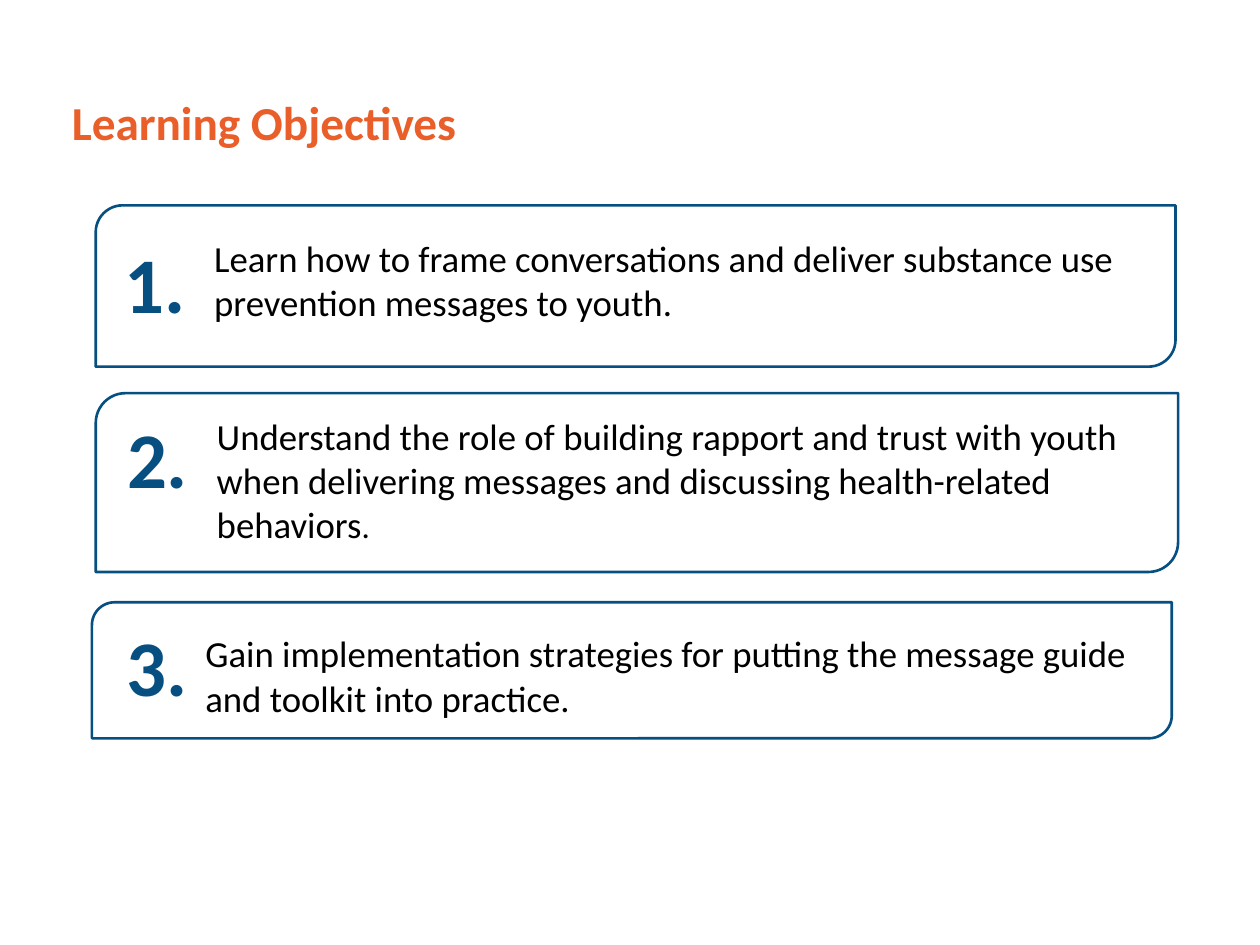
import pptx
import pptx.dml.color
import pptx.enum.shapes
import pptx.enum.text
import pptx.util

ORANGE, NAVY, BLACK, WHITE = "EA5E29", "064F80", "000000", "FFFFFF"

# Panel, number and wording frames: column, row, columns, rows
OBJECTIVES = [
    (["Learn how to frame conversations and deliver substance use "
      "prevention messages to youth."],
     (7.6, 16.3, 85.7, 12.8), (8.9, 18.1, 7.9, 11.1), (16.3, 18.3, 75.7, 10.2)),
    (["Understand the role of building rapport and trust with youth when "
      "delivering messages and discussing health-related behaviors", "."],
     (7.6, 31.2, 85.9, 14.2), (9.1, 32, 7.9, 10.2), (16.5, 32.4, 76.5, 11.4)),
    (["Gain implementation strategies for putting the message guide "
      "and toolkit into practice."],
     (7.3, 47.8, 85.7, 10.8), (9.1, 48.5, 9, 10.6), (15.6, 49.7, 76.2, 9.6)),
]


def color(hex_code):
    return pptx.dml.color.RGBColor.from_string(hex_code)


class ObjectivesSlide:
    """Style and current slide, laid out on a grid of 100 columns by 75 rows."""

    font = "Calibri"
    columns, rows = 100, 75

    def __init__(self, deck):
        self.column = deck.slide_width / self.columns
        self.row = deck.slide_height / self.rows
        self.slide = deck.slides.add_slide(deck.slide_layouts[5])

    def frame(self, column, row, columns, rows):
        return (round(column * self.column), round(row * self.row),
                round(columns * self.column), round(rows * self.row))

    def format_run(self, run, size, hex_code, bold=False):
        run.font.name = self.font
        run.font.size = pptx.util.Pt(size)
        run.font.bold = bold
        run.font.color.rgb = color(hex_code)

    def title(self, wording, frame):
        heading = self.slide.shapes.title
        heading.left, heading.top, heading.width, heading.height = self.frame(*frame)
        heading.text_frame.text = wording
        heading.text_frame.vertical_anchor = pptx.enum.text.MSO_ANCHOR.MIDDLE
        paragraph = heading.text_frame.paragraphs[0]
        paragraph.alignment = pptx.enum.text.PP_ALIGN.LEFT
        paragraph.line_spacing = 0.9
        self.format_run(paragraph.runs[0], 27, ORANGE, bold=True)

    def panel(self, group, frame):
        outline = group.shapes.add_shape(
            pptx.enum.shapes.MSO_SHAPE.ROUND_2_DIAG_RECTANGLE, *self.frame(*frame))
        outline.shadow.inherit = False
        outline.fill.solid()
        outline.fill.fore_color.rgb = color(WHITE)
        outline.line.color.rgb = color(NAVY)
        outline.line.width = pptx.util.Pt(1.5)

    def text(self, group, frame):
        """Add an empty wrapping text box and return its text frame."""
        body = group.shapes.add_textbox(*self.frame(*frame)).text_frame
        body.word_wrap = True
        body.auto_size = pptx.enum.text.MSO_AUTO_SIZE.SHAPE_TO_FIT_TEXT
        return body

    def number(self, group, value, frame):
        body = self.text(group, frame)
        body.text = f"{value}."
        self.format_run(body.paragraphs[0].runs[0], 45, NAVY, bold=True)

    def wording(self, group, parts, frame):
        """Write the objective, with a closing full stop slightly smaller."""
        body = self.text(group, frame)
        body.margin_left = body.margin_right = pptx.util.Inches(0.07)
        body.margin_top = body.margin_bottom = pptx.util.Inches(0.04)
        for part, size in zip(parts, (21, 18.8)):
            run = body.paragraphs[0].add_run()
            run.text = part
            self.format_run(run, size, BLACK)

    def objective(self, value, parts, panel, number, wording):
        group = self.slide.shapes.add_group_shape()
        self.panel(group, panel)
        self.number(group, value, number)
        self.wording(group, parts, wording)


def main():
    deck = pptx.Presentation()
    deck.slide_width = pptx.util.Inches(10)
    deck.slide_height = pptx.util.Inches(7.5)
    page = ObjectivesSlide(deck)
    page.title("Learning Objectives", (4.7, 5.7, 90.7, 8.5))
    for value, objective in enumerate(OBJECTIVES, start=1):
        page.objective(value, *objective)
    deck.save("out.pptx")


if __name__ == "__main__":
    main()
